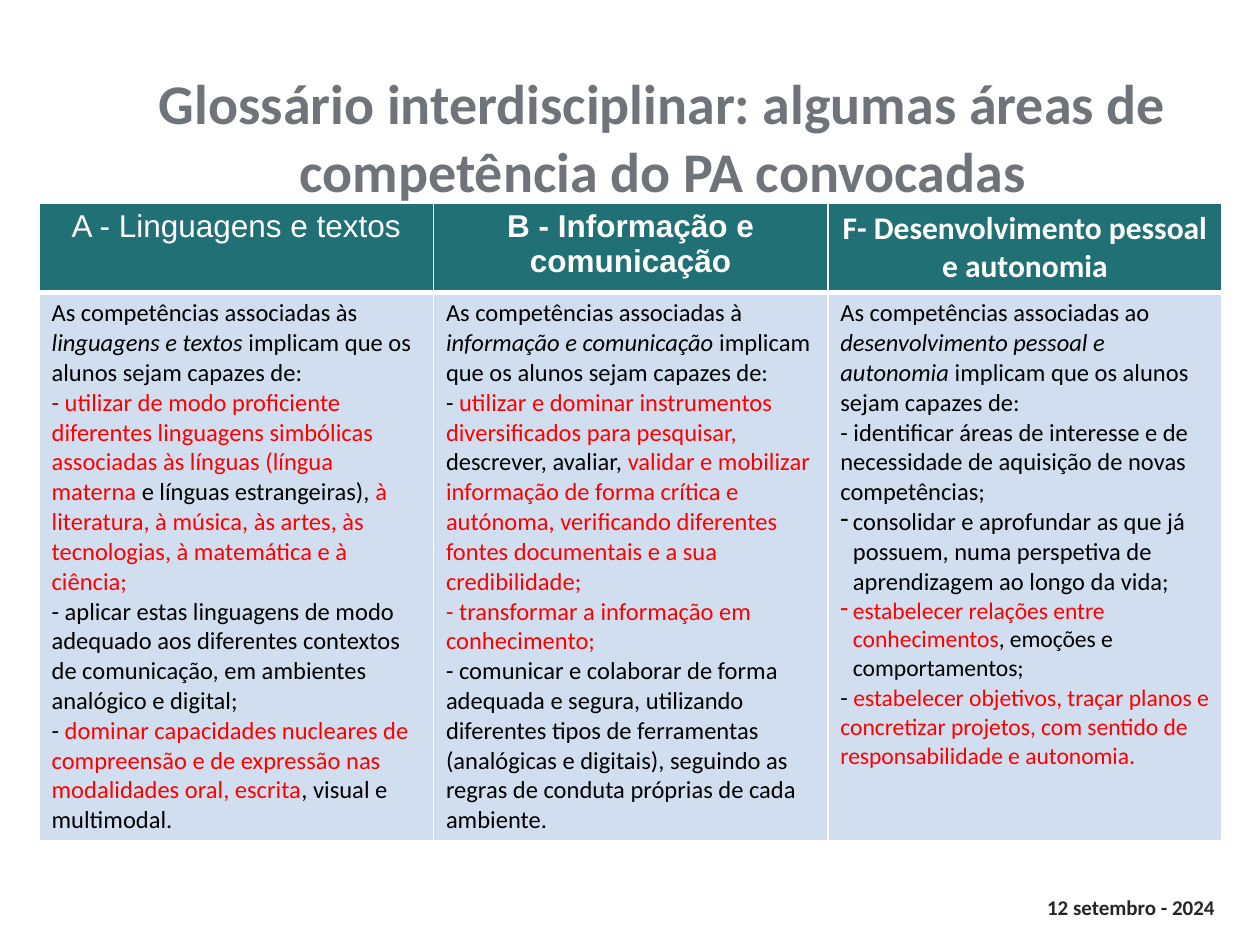
from dataclasses import dataclass
from typing import Optional

from lxml import etree
from pptx import Presentation
from pptx.dml.color import RGBColor
from pptx.enum.text import MSO_ANCHOR, PP_ALIGN
from pptx.oxml.ns import qn
from pptx.util import Inches, Pt

CENTER, RIGHT = PP_ALIGN.CENTER, PP_ALIGN.RIGHT
MIDDLE = MSO_ANCHOR.MIDDLE
COLORS = {
    "title": "6E747A", "date": "262626", "header": "217076", "body": "D0DEEF",
    "white": "FFFFFF", "black": "000000", "red": "FF0000", "wine": "880016",
}


@dataclass
class Run:
    text: str
    color: str = "black"
    italic: bool = False
    size: Optional[float] = None


@dataclass
class Para:
    runs: list[Run]
    bullet: Optional[str] = None  # colour of a dash bullet


@dataclass
class Column:
    header: str
    font: str
    bold: bool
    paras: list[Para]


def red(text: str, size: Optional[float] = None) -> Run:
    return Run(text, "red", size=size)


def intro(start: str, area: str) -> Para:
    return Para([Run(f"As competências associadas {start} "), Run(f"{area} ", italic=True),
                 Run("implicam que os alunos sejam capazes de:")])


COLUMNS = [
    Column("A - Linguagens e textos", "Arial", False, [
        intro("às", "linguagens e textos"),
        Para([Run("- ", "wine"),
              red("utilizar de modo proficiente diferentes linguagens simbólicas "
                  "associadas às línguas (língua materna "),
              Run("e línguas estrangeiras), "),
              red("à literatura, à música, às artes, às tecnologias, à matemática e à ciência;")]),
        Para([Run("- aplicar estas linguagens de modo adequado aos diferentes contextos "
                  "de comunicação, em ambientes analógico e digital;")]),
        Para([Run("- "),
              red("dominar capacidades nucleares de compreensão e de expressão "
                  "nas modalidades oral, escrita"),
              Run(", visual e multimodal.")]),
    ]),
    Column("B - Informação e comunicação", "Arial", True, [
        intro("à", "informação e comunicação"),
        Para([Run("- "),
              red("utilizar e dominar instrumentos diversificados para pesquisar, "),
              Run("descrever, avaliar, "),
              red("validar e mobilizar informação de forma crítica e autónoma, "
                  "verificando diferentes fontes documentais e a sua credibilidade;")]),
        Para([red("- transformar a informação em conhecimento;")]),
        Para([Run("- comunicar e colaborar de forma adequada e segura, utilizando diferentes "
                  "tipos de ferramentas (analógicas e digitais), seguindo as regras de conduta "
                  "próprias de cada ambiente.")]),
    ]),
    Column("F- Desenvolvimento pessoal e autonomia", "Calibri", True, [
        intro("ao", "desenvolvimento pessoal e autonomia"),
        Para([Run("- identificar áreas de interesse e de necessidade de aquisição "
                  "de novas competências;")]),
        Para([Run("consolidar e aprofundar as que já possuem, numa perspetiva de "
                  "aprendizagem ao longo da vida;")], bullet="black"),
        Para([red("estabelecer relações entre conhecimentos", 13.5),
              Run(", emoções e comportamentos;", size=13.5)], bullet="red"),
        Para([Run("- "),
              red("estabelecer objetivos, traçar planos e concretizar projetos, "
                  "com sentido de responsabilidade e autonomia", 13.5),
              red(".")]),
    ]),
]


def rgb(name: str) -> RGBColor:
    return RGBColor.from_string(COLORS[name])


def set_font(p, name: str, size: float, bold: bool, color: str) -> None:
    p.font.name, p.font.size, p.font.bold = name, Pt(size), bold
    p.font.color.rgb = rgb(color)


def add_label(s, box: tuple, text: str, size: float, color: str, align) -> None:
    tf = s.shapes.add_textbox(*(Inches(v) for v in box)).text_frame
    tf.word_wrap = True
    tf.vertical_anchor = MIDDLE
    p = tf.paragraphs[0]
    p.text, p.alignment = text, align
    set_font(p, "Calibri", size, True, color)


def add_bullet(p, color: str) -> None:
    pPr = p._p.get_or_add_pPr()
    pPr.set("marL", str(Inches(0.1)))
    pPr.set("indent", str(Inches(-0.1)))
    clr = etree.Element(qn("a:buClr"))
    etree.SubElement(clr, qn("a:srgbClr"), val=COLORS[color])
    pPr.insert(0, clr)
    pPr.insert(1, etree.Element(qn("a:buChar"), char="-"))


def style_cell(cell, fill: str, top: float, bottom: float) -> None:
    tcPr = cell._tc.get_or_add_tcPr()
    for side, width in (("L", 1), ("R", 1), ("T", top), ("B", bottom)):
        ln = etree.SubElement(tcPr, qn(f"a:ln{side}"), w=str(Pt(width)))
        solid = etree.SubElement(ln, qn("a:solidFill"))
        etree.SubElement(solid, qn("a:srgbClr"), val=COLORS["white"])
    cell.fill.solid()
    cell.fill.fore_color.rgb = rgb(fill)


def fill_header(cell, col: Column) -> None:
    style_cell(cell, "header", 1, 3)
    p = cell.text_frame.paragraphs[0]
    p.text, p.alignment = col.header, CENTER
    set_font(p, col.font, 18, col.bold, "white")


def fill_body(cell, paras: list[Para]) -> None:
    style_cell(cell, "body", 3, 1)
    tf = cell.text_frame
    for i, para in enumerate(paras):
        p = tf.add_paragraph() if i else tf.paragraphs[0]
        set_font(p, "Calibri", 14, False, "black")
        if para.bullet:
            add_bullet(p, para.bullet)
        for run in para.runs:
            r = p.add_run()
            r.text = run.text
            r.font.color.rgb = rgb(run.color)
            if run.italic:
                r.font.italic = True
            if run.size:
                r.font.size = Pt(run.size)


def main() -> None:
    prs = Presentation()
    prs.slide_width, prs.slide_height = Inches(10), Inches(7.5)
    s = prs.slides.add_slide(prs.slide_layouts[6])

    # Date and title
    add_label(s, (7.93, 7.05, 1.81, 0.3), "12 setembro - 2024", 12, "date", RIGHT)
    add_label(s, (0.52, 0.79, 9.48, 0.58),
              "Glossário interdisciplinar: algumas áreas de competência do PA convocadas",
              32, "title", CENTER)

    # Table of competence areas
    table = s.shapes.add_table(2, len(COLUMNS), Inches(0.31), Inches(1.61),
                               Inches(9.39), Inches(5.06)).table
    table.first_row = table.horz_banding = False
    table.rows[0].height, table.rows[1].height = Inches(0.71), Inches(4.35)
    for i, col in enumerate(COLUMNS):
        table.columns[i].width = Inches(3.13)
        fill_header(table.cell(0, i), col)
        fill_body(table.cell(1, i), col.paras)

    prs.save("out.pptx")


if __name__ == "__main__":
    main()
